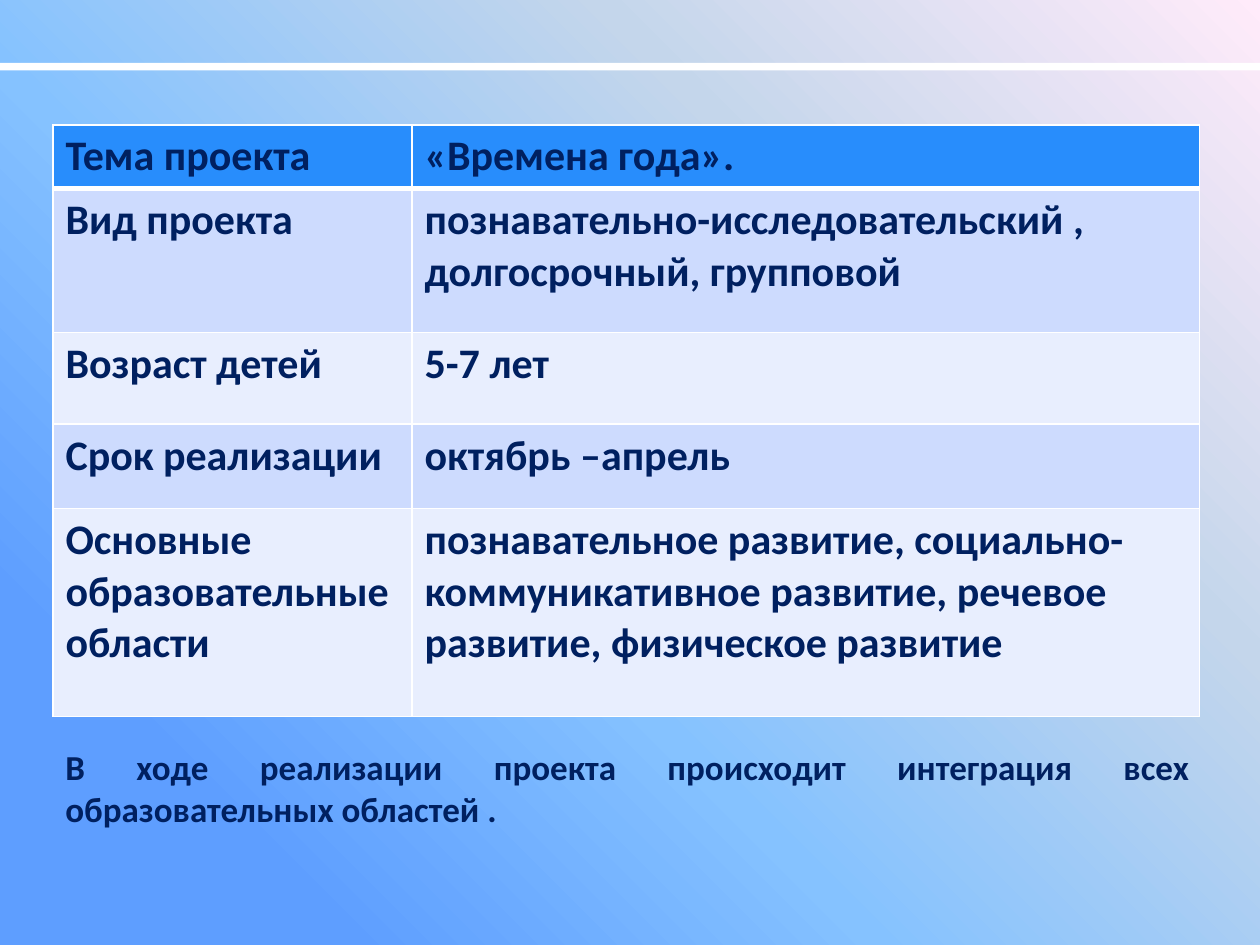
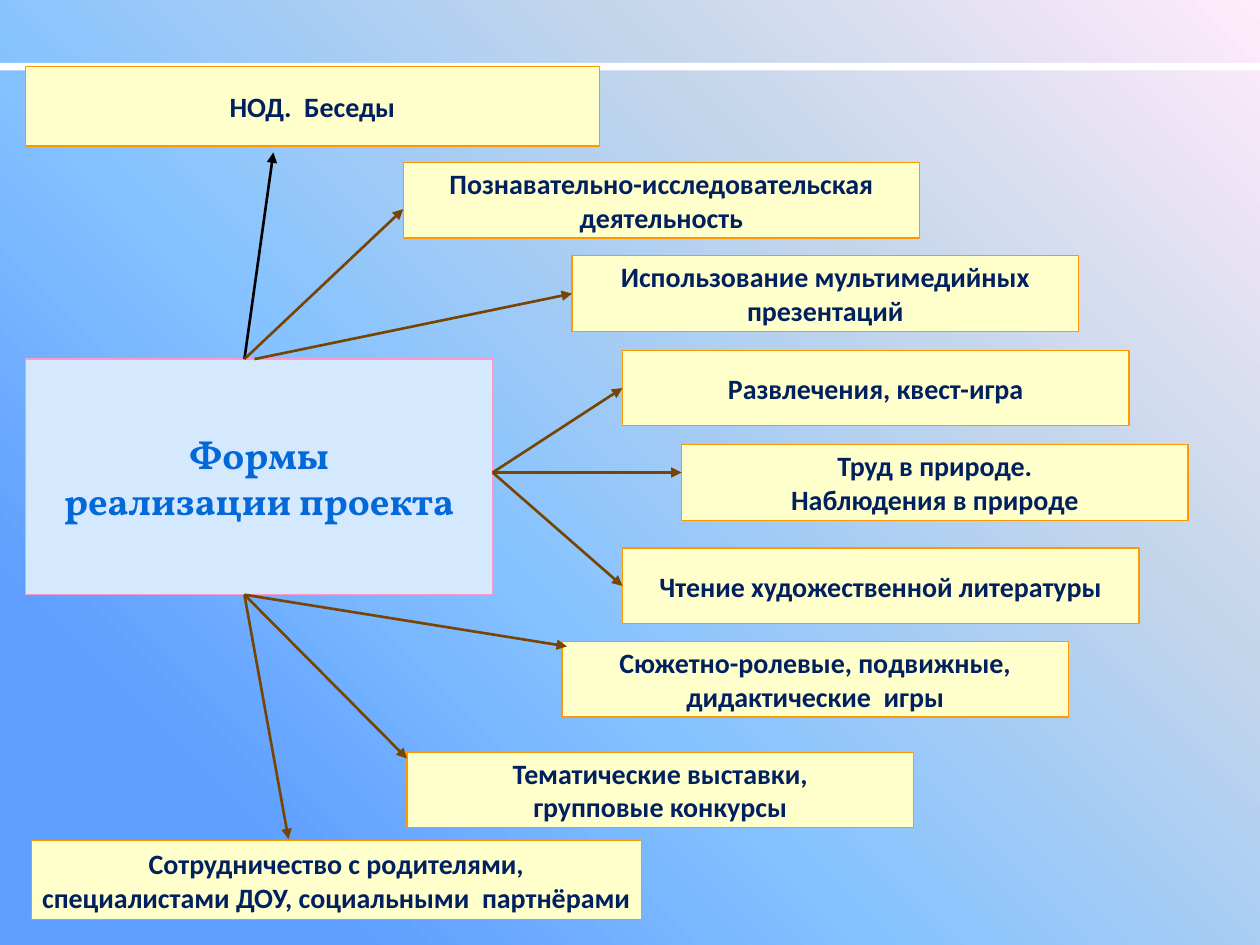
"""Build two slides on a kindergarten project: its passport table and its forms of work."""
from lxml.etree import SubElement
from pptx import Presentation
from pptx.dml.color import RGBColor
from pptx.enum.shapes import MSO_CONNECTOR, MSO_SHAPE
from pptx.enum.text import MSO_ANCHOR, MSO_AUTO_SIZE, PP_ALIGN
from pptx.oxml.ns import qn
from pptx.util import Inches, Pt

WHITE = RGBColor(0xFF, 0xFF, 0xFF)
BLACK = RGBColor(0x00, 0x00, 0x00)
NAVY = RGBColor(0x00, 0x20, 0x60)
BLUE = RGBColor(0x03, 0x68, 0xD8)
PALE_BLUE = RGBColor(0xD4, 0xE8, 0xFE)
PINK = RGBColor(0xFF, 0x99, 0xCC)
CREAM = RGBColor(0xFF, 0xFF, 0xCC)
ORANGE = RGBColor(0xFF, 0x99, 0x00)
BROWN = RGBColor(0x76, 0x45, 0x03)
HEADER = RGBColor(0x28, 0x8D, 0xFC)
BANDS = [RGBColor(0xE8, 0xEE, 0xFE), RGBColor(0xCD, 0xDB, 0xFE)]
BACKDROP = [
    (16, RGBColor(0x5E, 0x9E, 0xFF)),
    (40, RGBColor(0x85, 0xC2, 0xFF)),
    (70, RGBColor(0xC4, 0xD6, 0xEB)),
    (100, RGBColor(0xFF, 0xEB, 0xFA)),
]


def add_text(p, text, size, align=PP_ALIGN.LEFT, font="Calibri", color=NAVY):
    p.alignment = align
    r = p.add_run()
    r.text = text
    r.font.name, r.font.size, r.font.bold = font, Pt(size), True
    r.font.color.rgb = color
    return r


def add_box(slide, box, fill, line=None):
    sp = slide.shapes.add_shape(MSO_SHAPE.RECTANGLE, *[Inches(v) for v in box])
    sp.shadow.inherit = False
    sp.fill.solid()
    sp.fill.fore_color.rgb = fill
    if line is None:
        sp.line.fill.background()
    else:
        sp.line.color.rgb = line
        sp.line.width = Pt(0.75)
    tf = sp.text_frame
    tf.word_wrap = False
    tf.vertical_anchor = MSO_ANCHOR.MIDDLE
    return sp


prs = Presentation()
prs.slide_width, prs.slide_height = Inches(10), Inches(7.5)
master = prs.slide_master
blank = prs.slide_layouts[6]

fill = master.background.fill
fill.gradient()
fill.gradient_angle = 45
stops = master.element.xpath(".//p:bg//a:gsLst")[0]
for stop in list(stops):
    stops.remove(stop)
for percent, color in BACKDROP:
    stop = SubElement(stops, qn("a:gs"), pos=str(percent * 1000))
    SubElement(stop, qn("a:srgbClr"), val=str(color))

slide = prs.slides.add_slide(blank)
band = add_box(slide, (0, 0.5, 10, 0.06), WHITE)
master.shapes.element.append(band.element)

passport = [
    (0.42, "Тема проекта", "«Времена года»."),
    (1.14, "Вид проекта", "познавательно-исследовательский , долгосрочный, групповой"),
    (0.73, "Возраст детей", "5-7 лет"),
    (0.67, "Срок реализации", "октябрь –апрель"),
    (1.65, "Основные образовательные области",
     "познавательное развитие, социально-коммуникативное развитие, "
     "речевое развитие, физическое развитие"),
]
table = slide.shapes.add_table(
    len(passport), 2, Inches(0.42), Inches(0.99), Inches(9.1), Inches(4.61)).table
for column, width in zip(table.columns, (2.85, 6.25)):
    column.width = Inches(width)
for i, (height, *texts) in enumerate(passport):
    table.rows[i].height = Inches(height)
    for j, text in enumerate(texts):
        cell = table.cell(i, j)
        add_text(cell.text_frame.paragraphs[0], text, 24)
        tcPr = cell._tc.get_or_add_tcPr()
        for side in "LRTB":
            thick = (i, side) in ((0, "B"), (1, "T"))
            ln = SubElement(tcPr, qn("a:ln" + side), w=str(Pt(3 if thick else 1)))
            paint = SubElement(ln, qn("a:solidFill"))
            SubElement(paint, qn("a:srgbClr"), val=str(WHITE))
        cell.fill.solid()
        cell.fill.fore_color.rgb = BANDS[i % 2] if i else HEADER

tf = slide.shapes.add_textbox(Inches(0.42), Inches(5.87), Inches(9.12), Inches(0.77)).text_frame
tf.word_wrap = True
tf.auto_size = MSO_AUTO_SIZE.SHAPE_TO_FIT_TEXT
add_text(tf.paragraphs[0],
         "В ходе реализации проекта происходит интеграция всех образовательных областей .",
         20, PP_ALIGN.JUSTIFY)

slide = prs.slides.add_slide(blank)
hub = add_box(slide, (0.2, 2.85, 3.71, 1.87), PALE_BLUE, PINK)
tf = hub.text_frame
for i, text in enumerate(["Формы", "реализации проекта"]):
    p = tf.add_paragraph() if i else tf.paragraphs[0]
    r = add_text(p, text, 22, PP_ALIGN.CENTER, "Vollkorn", BLUE)
    rPr = r.font._element
    ln = SubElement(rPr, qn("a:ln"), w=str(Pt(1)))
    SubElement(SubElement(ln, qn("a:solidFill")), qn("a:srgbClr"), val=str(NAVY))
    rPr.insert(0, ln)

TOP, RIGHT, BOTTOM = (1.94, 2.85), (3.91, 3.75), (1.94, 4.72)
forms = [
    ((0.2, 0.53, 4.56, 0.63), ["НОД.  Беседы"], TOP, (2.17, 1.21), BLACK),
    ((3.2, 1.29, 4.1, 0.6), ["Познавательно-исследовательская", "деятельность"],
     TOP, (3.2, 1.66), BROWN),
    ((4.54, 2.03, 4.02, 0.6), ["Использование мультимедийных", "презентаций"],
     (2.02, 2.85), (4.54, 2.33), BROWN),
    ((4.94, 2.78, 4.02, 0.6), ["Развлечения, квест-игра"], RIGHT, (4.94, 3.08), BROWN),
    ((5.41, 3.53, 4.02, 0.6), ["Труд в природе.", "Наблюдения в природе"],
     RIGHT, (5.41, 3.75), BROWN),
    ((4.94, 4.35, 4.1, 0.6), ["Чтение художественной литературы"],
     RIGHT, (4.94, 4.65), BROWN),
    ((4.46, 5.09, 4.02, 0.6), ["Сюжетно-ролевые, подвижные,", "дидактические  игры"],
     BOTTOM, (4.5, 5.13), BROWN),
    ((3.23, 5.97, 4.02, 0.6), ["Тематические выставки,", "групповые конкурсы"],
     BOTTOM, (3.23, 6.02), BROWN),
    ((0.25, 6.67, 4.84, 0.63),
     ["Сотрудничество с родителями,", "специалистами ДОУ, социальными  партнёрами"],
     BOTTOM, (2.29, 6.66), BROWN),
]
for box, lines, start, end, color in forms:
    tf = add_box(slide, box, CREAM, ORANGE).text_frame
    for i, text in enumerate(lines):
        p = tf.add_paragraph() if i else tf.paragraphs[0]
        add_text(p, text, 16, PP_ALIGN.CENTER)
    arrow = slide.shapes.add_connector(
        MSO_CONNECTOR.STRAIGHT, *[Inches(v) for v in start + end])
    arrow.line.color.rgb = color
    arrow.line.width = Pt(1.5)
    SubElement(arrow.line._get_or_add_ln(), qn("a:tailEnd"), type="triangle")
    SubElement(arrow.element.spPr, qn("a:effectLst"))

prs.save("out.pptx")
